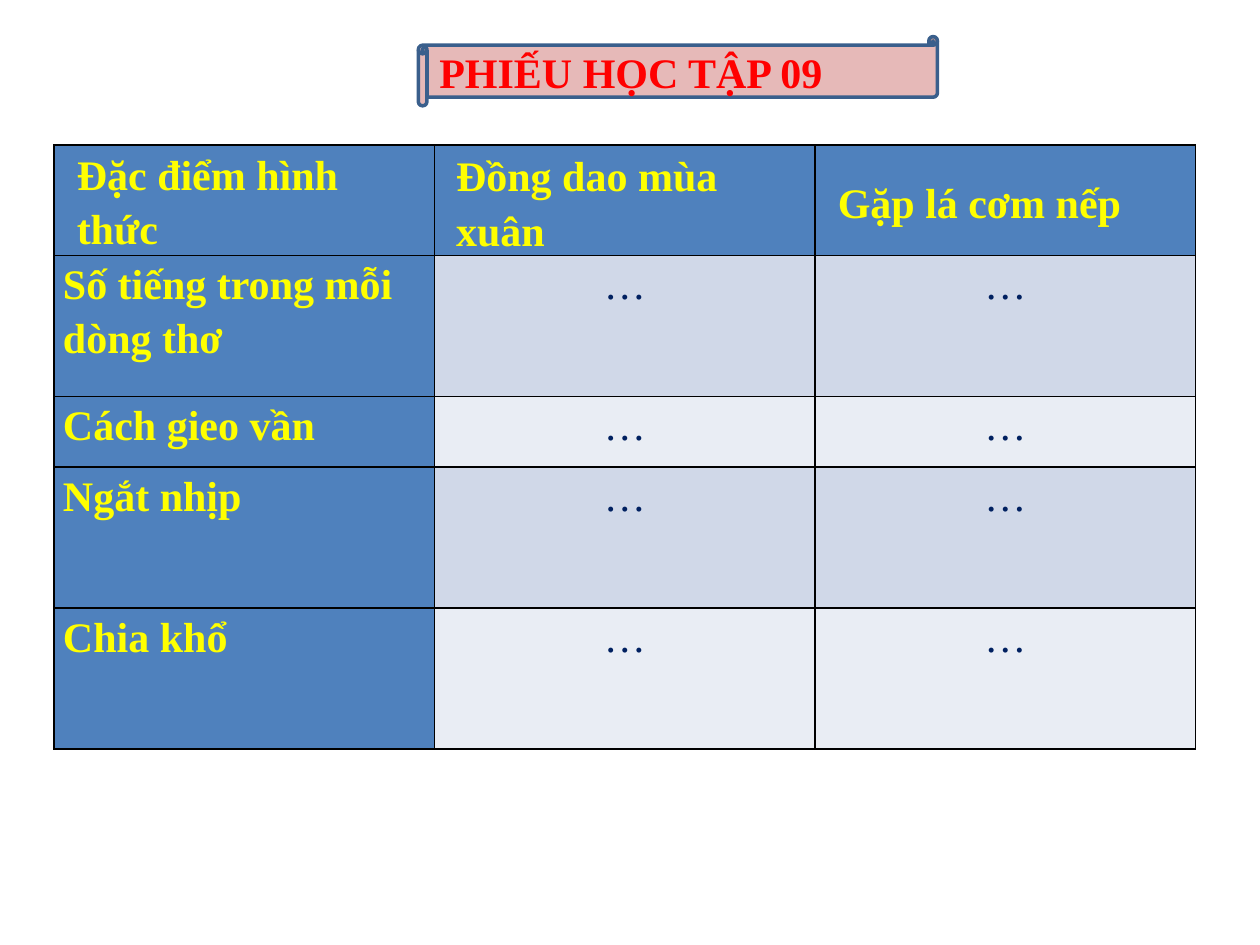
from lxml import etree
from pptx import Presentation
from pptx.dml.color import RGBColor
from pptx.enum.shapes import MSO_SHAPE
from pptx.enum.text import MSO_ANCHOR, PP_ALIGN
from pptx.oxml.ns import qn
from pptx.util import Inches, Pt

SCROLL = MSO_SHAPE.HORIZONTAL_SCROLL
TOP, MIDDLE = MSO_ANCHOR.TOP, MSO_ANCHOR.MIDDLE
LEFT, CENTER = PP_ALIGN.LEFT, PP_ALIGN.CENTER
FONT = "Times New Roman"
COLORS = {
    "head": "4F81BD", "odd": "D0D8E8", "even": "E9EDF4",
    "label": "FFFF00", "dots": "002060", "grid": "000000",
    "scroll": "E6B9B8", "edge": "3A5F8C", "title": "FF0000",
}
HEADS = [
    ("Đặc điểm hình thức", TOP, 0.11, 1.17, 13),
    ("Đồng dao mùa xuân", MIDDLE, 0.1, 1.19, 0),
    ("Gặp lá cơm nếp", MIDDLE, 0.11, 1.19, 0),
]
LABELS = ["Số tiếng trong mỗi dòng thơ", "Cách gieo vần", "Ngắt nhịp", "Chia khổ"]
UNIT = 0.56
ROWS = [0.58] + [UNIT * n for n in (2, 1, 2, 2)]


def color(name):
    return RGBColor.from_string(COLORS[name])


def paint(obj, name):
    obj.fill.solid()
    obj.fill.fore_color.rgb = color(name)


def write(frame, text, name, bold=True, align=LEFT):
    para = frame.paragraphs[0]
    para.text = text
    para.alignment = align
    font = para.font
    font.name, font.size, font.bold = FONT, Pt(24), bold
    font.color.rgb = color(name)
    return para


def border(cell):
    props = cell._tc.get_or_add_tcPr()
    for place, side in enumerate(("lnL", "lnR", "lnT", "lnB")):
        line = etree.Element(qn("a:" + side), w=str(Pt(1)))
        fill = etree.SubElement(line, qn("a:solidFill"))
        etree.SubElement(fill, qn("a:srgbClr"), val=COLORS["grid"])
        props.insert(place, line)


def style(cell, name, anchor=TOP):
    paint(cell, name)
    border(cell)
    cell.vertical_anchor = anchor
    cell.margin_left = cell.margin_right = Inches(0.07)
    cell.margin_top = cell.margin_bottom = 0


def title(slide, box):
    shape = slide.shapes.add_shape(SCROLL, *map(Inches, box))
    shape.shadow.inherit = False
    paint(shape, "scroll")
    shape.line.color.rgb = color("edge")
    shape.line.width = Pt(2)
    shape.text_frame.word_wrap = True
    shape.text_frame.vertical_anchor = MIDDLE
    write(shape.text_frame, "PHIẾU HỌC TẬP 09", "title")


def grid(slide, box):
    table = slide.shapes.add_table(len(ROWS), len(HEADS), *map(Inches, box)).table
    for col in table.columns:
        col.width = Inches(box[2] / len(HEADS))
    for row, height in zip(table.rows, ROWS):
        row.height = Inches(height)
    for col, (text, anchor, indent, space, before) in enumerate(HEADS):
        cell = table.cell(0, col)
        style(cell, "head", anchor)
        para = write(cell.text_frame, text, "label")
        para.line_spacing = space
        para.space_before = Pt(before)
        para._p.get_or_add_pPr().set("marL", str(Inches(indent)))
    for row, label in enumerate(LABELS, 1):
        for col in range(len(HEADS)):
            cell = table.cell(row, col)
            if col:
                style(cell, "odd" if row % 2 else "even")
                para = write(cell.text_frame, "…", "dots", False, CENTER)
            else:
                style(cell, "head")
                para = write(cell.text_frame, label, "label")
            para.line_spacing = 1.15


def main():
    deck = Presentation()
    deck.slide_width, deck.slide_height = Inches(10), Inches(7.5)
    slide = deck.slides.add_slide(deck.slide_layouts[6])
    grid(slide, (0.43, 1.15, 9.06, sum(ROWS)))
    title(slide, (3.32, 0.29, 4.12, 0.55))
    deck.save("out.pptx")


if __name__ == "__main__":
    main()
